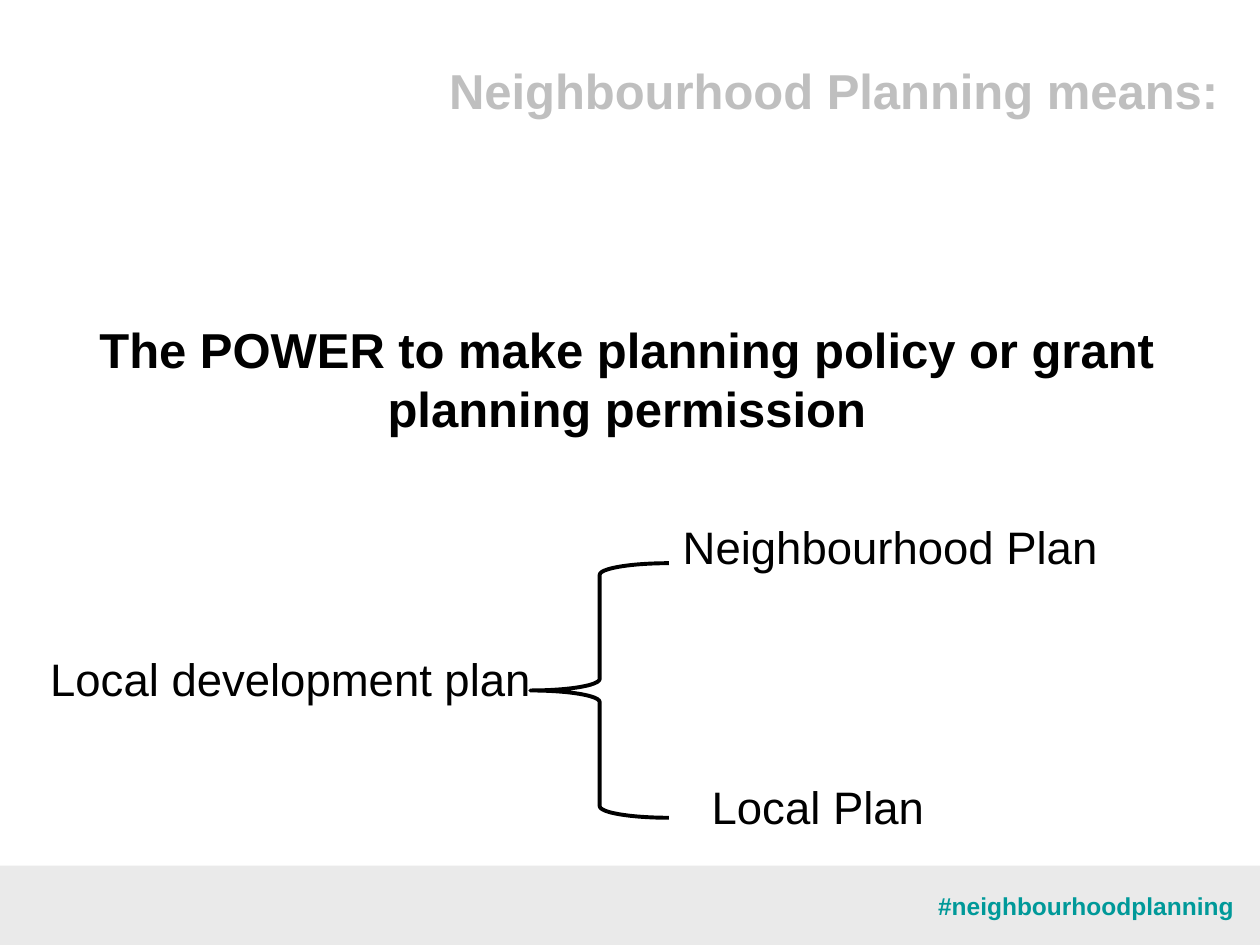
from pptx import Presentation
from pptx.dml.color import RGBColor as Rgb
from pptx.enum.shapes import MSO_SHAPE as Kind
from pptx.enum.text import MSO_ANCHOR as Anchor, PP_ALIGN as Align
from pptx.util import Inches, Pt

WIDE, HIGH = 10, 7.5
HUES = {"ink": "000000", "title": "BFBFBF", "tag": "009999", "band": "EAEAEA"}


def place(left, top, width, height):
    """Turn inches into a tuple of slide lengths."""
    return tuple(Inches(n) for n in (left, top, width, height))


def write(shape, text, size, hue="ink", bold=False, align=Align.LEFT):
    """Fill a shape with one formatted paragraph."""
    frame = shape.text_frame
    frame.word_wrap = True
    frame.vertical_anchor = Anchor.TOP
    frame.text = text
    para = frame.paragraphs[0]
    para.alignment = align
    for key, val in {"name": "Arial", "size": Pt(size), "bold": bold}.items():
        setattr(para.font, key, val)
    para.font.color.rgb = Rgb.from_string(HUES[hue])


def label(slide, text, box, size, **form):
    """Add a text box."""
    write(slide.shapes.add_textbox(*place(*box)), text, size, **form)


def head(slide, text):
    """Move and format the title."""
    title = slide.shapes.title
    title.left, title.top, title.width, title.height = place(1.34, 0.43, 8.43, 0.57)
    write(title, text, 28, hue="title", bold=True, align=Align.RIGHT)


def foot(slide, text):
    """Add the bottom band and its tag."""
    top = 6.87
    band = slide.shapes.add_shape(Kind.RECTANGLE, *place(0, top, WIDE, HIGH - top))
    band.shadow.inherit = False
    band.fill.solid()
    band.fill.fore_color.rgb = Rgb.from_string(HUES["band"])
    band.line.fill.background()
    label(slide, text, (7.24, 7.02, 2.76, 0.34), 14,
          hue="tag", bold=True, align=Align.CENTER)


def brace(slide, box):
    """Add the brace that splits the plan in two."""
    mark = slide.shapes.add_shape(Kind.LEFT_BRACE, *place(*box))
    mark.shadow.inherit = False
    mark.fill.background()
    mark.line.color.rgb = Rgb.from_string(HUES["ink"])
    mark.line.width = Pt(2.25)


def main():
    """Build and save the slide."""
    deck = Presentation()
    deck.slide_width, deck.slide_height = Inches(WIDE), Inches(HIGH)
    slide = deck.slides.add_slide(deck.slide_layouts[5])
    foot(slide, "#neighbourhoodplanning")
    head(slide, "Neighbourhood Planning means:")
    label(slide, "The POWER to make planning policy or grant planning permission",
          (0.2, 2.49, 9.55, 1), 28, bold=True, align=Align.CENTER)
    brace(slide, (4.21, 4.47, 1.1, 2.02))
    for text, left, top, width in (
        ("Local development plan", 0.3, 5.12, 4.1),
        ("Neighbourhood Plan", 5.32, 4.07, 3.8),
        ("Local Plan", 5.55, 6.13, 3.07),
    ):
        label(slide, text, (left, top, width, 0.54), 26)
    deck.save("out.pptx")


if __name__ == "__main__":
    main()
